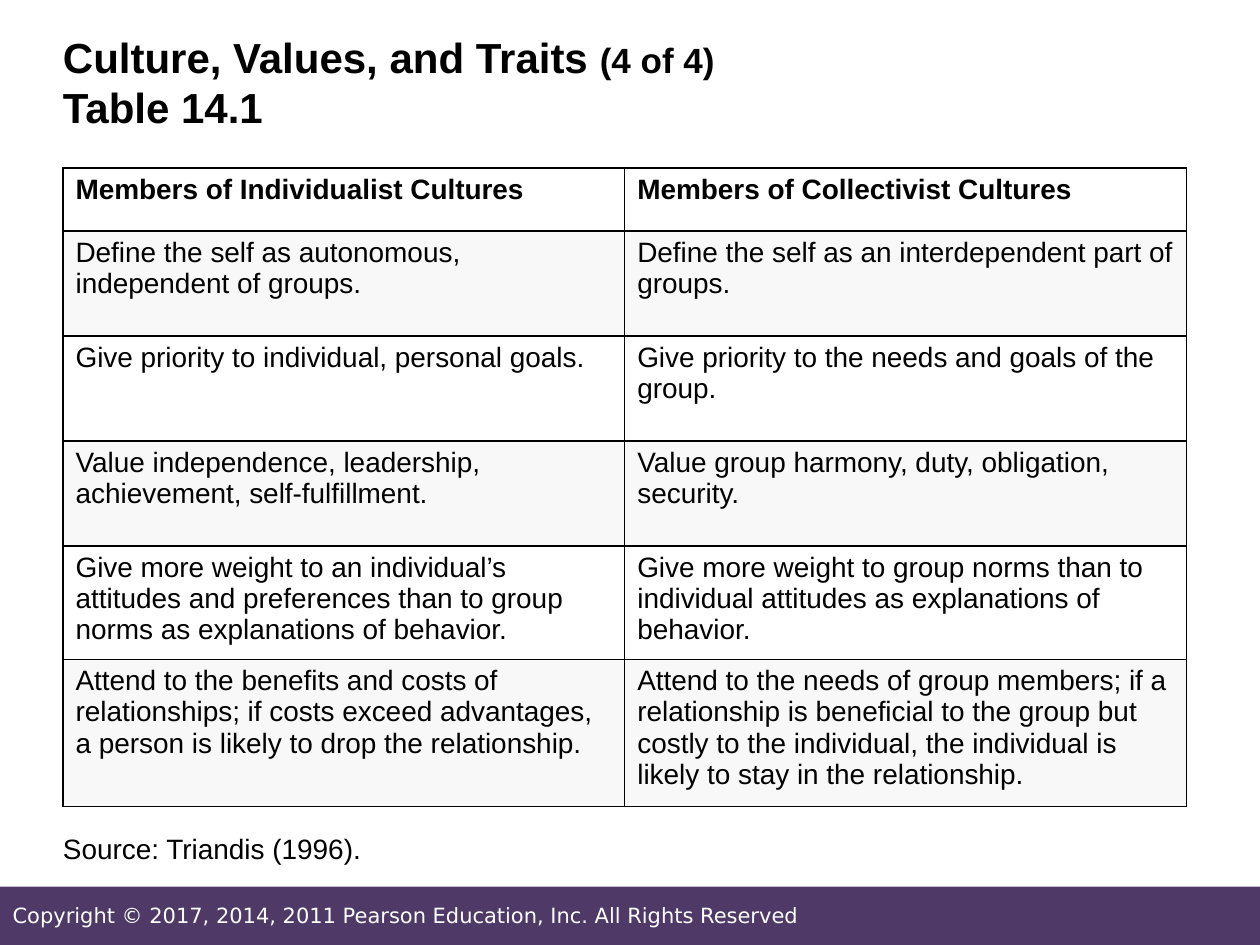
from typing import NamedTuple

import pptx
import pptx.dml.color
import pptx.enum.shapes
import pptx.enum.text
import pptx.oxml
import pptx.oxml.ns
import pptx.util

Pt = pptx.util.Pt
Anchor = pptx.enum.text.MSO_ANCHOR
BLACK, WHITE, PURPLE, BAND = "000000", "FFFFFF", "4F3967", "DDDDDD"


class Run(NamedTuple):
    text: str
    size: float
    bold: bool = False
    color: str = BLACK
    font: str = "Arial"


class Box(NamedTuple):
    left: float
    top: float
    width: float
    height: float
    anchor: Anchor
    lines: list[list[Run]]


class Row(NamedTuple):
    individualist: str
    collectivist: str
    height: float = 60


BOXES = [
    Box(7.2, 505, 497.5, 36, Anchor.MIDDLE, [
        [Run("Copyright © 2017, 2014, 2011 Pearson Education, Inc. All Rights Reserved",
             12, color=WHITE, font="DejaVu Sans")],
    ]),
    Box(36, 18, 648, 84, Anchor.TOP, [
        [Run("Culture, Values, and Traits ", 24, True), Run("(4 of 4)", 20, True)],
        [Run("Table 14.1", 24, True)],
    ]),
    Box(36, 422.6, 648, 72, Anchor.BOTTOM, [[Run("Source: Triandis (1996).", 16)]]),
]

ROWS = [
    Row("Members of Individualist Cultures", "Members of Collectivist Cultures", 36),
    Row("Define the self as autonomous, independent of groups.",
        "Define the self as an interdependent part of groups."),
    Row("Give priority to individual, personal goals.",
        "Give priority to the needs and goals of the group."),
    Row("Value independence, leadership, achievement, self-fulfillment.",
        "Value group harmony, duty, obligation, security."),
    Row("Give more weight to an individual’s attitudes and preferences than to group "
        "norms as explanations of behavior.",
        "Give more weight to group norms than to individual attitudes as explanations "
        "of behavior."),
    Row("Attend to the benefits and costs of relationships; if costs exceed advantages, "
        "a person is likely to drop the relationship.",
        "Attend to the needs of group members; if a relationship is beneficial to the "
        "group but costly to the individual, the individual is likely to stay in the "
        "relationship."),
]


def rgb(value: str) -> pptx.dml.color.RGBColor:
    return pptx.dml.color.RGBColor.from_string(value)


def add_run(p, run: Run) -> None:
    r = p.add_run()
    r.text = run.text
    r.font.size = Pt(run.size)
    r.font.bold = run.bold
    r.font.name = run.font
    r.font.color.rgb = rgb(run.color)


def add_box(s, box: Box) -> None:
    sp = s.shapes.add_textbox(Pt(box.left), Pt(box.top), Pt(box.width), Pt(box.height))
    tf = sp.text_frame
    tf.word_wrap = True
    tf.vertical_anchor = box.anchor
    tf.margin_left = tf.margin_right = tf.margin_top = tf.margin_bottom = 0
    p = tf.paragraphs[0]
    for i, line in enumerate(box.lines):
        if i:
            p.add_line_break()
        for run in line:
            add_run(p, run)


def add_footer_bar(s) -> None:
    sp = s.shapes.add_shape(pptx.enum.shapes.MSO_SHAPE.RECTANGLE,
                            Pt(-0.7), Pt(506.7), Pt(721.4), Pt(34))
    sp.shadow.inherit = False
    sp.fill.solid()
    sp.fill.fore_color.rgb = rgb(PURPLE)
    sp.line.fill.background()


def set_borders(cell, color: str, width: float) -> None:
    tc_pr = cell._tc.get_or_add_tcPr()
    for i, side in enumerate(("lnL", "lnR", "lnT", "lnB")):
        tc_pr.insert(i, pptx.oxml.parse_xml(
            f'<a:{side} {pptx.oxml.ns.nsdecls("a")} w="{Pt(width)}">'
            f'<a:solidFill><a:srgbClr val="{color}"/></a:solidFill></a:{side}>'))


def set_fill(cell, color: str, opacity: int) -> None:
    cell.fill.solid()
    cell.fill.fore_color.rgb = rgb(color)
    clr = cell._tc.tcPr.find(".//" + pptx.oxml.ns.qn("a:srgbClr"))
    clr.append(pptx.oxml.parse_xml(
        f'<a:alpha {pptx.oxml.ns.nsdecls("a")} val="{opacity * 1000}"/>'))


def add_comparison(s, rows: list[Row]) -> None:
    height = sum(row.height for row in rows)
    table = s.shapes.add_table(len(rows), 2, Pt(36), Pt(96), Pt(642), Pt(height)).table
    for col in table.columns:
        col.width = Pt(321)
    for i, row in enumerate(rows):
        table.rows[i].height = Pt(row.height)
        for j, text in enumerate((row.individualist, row.collectivist)):
            cell = table.cell(i, j)
            add_run(cell.text_frame.paragraphs[0], Run(text, 16, bold=i == 0))
            if i % 2:
                set_fill(cell, BAND, 20)
            else:
                cell.fill.background()
            set_borders(cell, BLACK, 1)


def main() -> None:
    prs = pptx.Presentation()
    prs.slide_width, prs.slide_height = Pt(720), Pt(540)
    s = prs.slides.add_slide(prs.slide_layouts[6])
    add_footer_bar(s)
    for box in BOXES:
        add_box(s, box)
    add_comparison(s, ROWS)
    prs.save("out.pptx")


if __name__ == "__main__":
    main()
